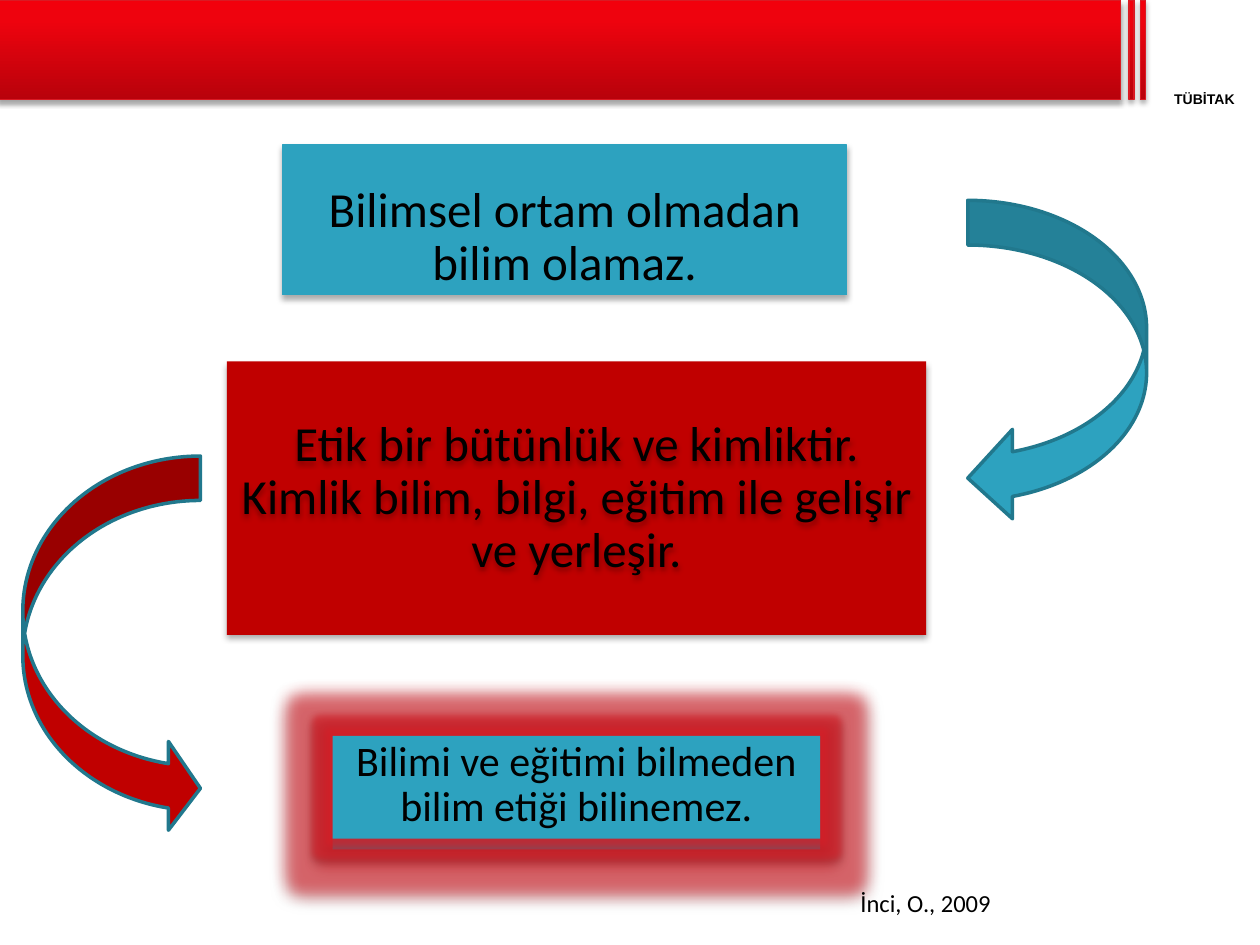
from copy import deepcopy

from lxml import etree
from pptx import Presentation
from pptx.dml.color import RGBColor
from pptx.enum.shapes import MSO_SHAPE as Preset
from pptx.enum.text import MSO_ANCHOR as Anchor, PP_ALIGN as Align
from pptx.oxml.ns import qn
from pptx.util import Pt

BLACK = RGBColor(0x00, 0x00, 0x00)
BLUE = RGBColor(0x2D, 0xA2, 0xBF)
DARK_BLUE = RGBColor(0x21, 0x78, 0x8D)
RED = RGBColor(0xC0, 0x00, 0x00)
GLOW_RED = RGBColor(0xDA, 0x1F, 0x28)
BAR_LINE = RGBColor(0xDA, 0x1A, 0x23)
BAR_STOPS = (
    (0, RGBColor(0xB8, 0x02, 0x0B)),
    (0.8, RGBColor(0xEE, 0x03, 0x0E)),
    (1, RGBColor(0xF2, 0x00, 0x0C)),
)
BAR_SHADOW = (35, 3.1, 1.8)
BOX_SHADOW = (32, 3.5, 2.2)
BOX_INSET = 2.4


def add_effect(shape, tag, color, opacity, **sizes):
    effects = shape._element.spPr.find(qn("a:effectLst"))
    effect = etree.SubElement(effects, qn(tag))
    for name, value in sizes.items():
        effect.set(name, str(int(value)))
    tint = etree.SubElement(effect, qn("a:srgbClr"), val=str(color))
    etree.SubElement(tint, qn("a:alpha"), val=str(opacity * 1000))


def add_glow(shape, radius, opacity):
    add_effect(shape, "a:glow", GLOW_RED, opacity, rad=Pt(radius))


def add_shadow(shape, opacity, blur, distance):
    """Cast a black shadow straight down."""
    add_effect(shape, "a:outerShdw", BLACK, opacity,
               blurRad=Pt(blur), dist=Pt(distance), dir=90 * 60000)


def add_preset(page, preset, left, top, width, height, fill=None, line=None, weight=0.75):
    shape = page.shapes.add_shape(preset, Pt(left), Pt(top), Pt(width), Pt(height))
    shape.shadow.inherit = False
    if fill is not None:
        shape.fill.solid()
        shape.fill.fore_color.rgb = fill
    if line is None:
        shape.line.fill.background()
    else:
        shape.line.color.rgb = line
        shape.line.width = Pt(weight)
    return shape


def add_bar(page, left, width):
    bar = add_preset(page, Preset.RECTANGLE, left, 0, width, 56.9, line=BAR_LINE)
    bar.fill.gradient()
    bar.fill.gradient_angle = 90
    first = bar._element.spPr.find(".//" + qn("a:gs"))
    first.addnext(deepcopy(first))
    for stop, (position, color) in zip(bar.fill.gradient_stops, BAR_STOPS):
        stop.position = position
        stop.color.rgb = color
    add_shadow(bar, *BAR_SHADOW)


def write(shape, text, size, anchor=Anchor.TOP, align=Align.CENTER, font="Calibri",
          bold=False, inset=BOX_INSET, spacing=None, wrap=True):
    frame = shape.text_frame
    frame.word_wrap = wrap
    frame.vertical_anchor = anchor
    if inset is not None:
        frame.margin_left = frame.margin_right = Pt(inset)
        frame.margin_top = frame.margin_bottom = Pt(inset)
    para = frame.paragraphs[0]
    para.text = text
    para.alignment = align
    para.line_spacing = spacing
    para.font.name = font
    para.font.size = Pt(size)
    para.font.bold = bold
    para.font.color.rgb = BLACK


def add_label(page, left, top, width, height, text, size, **style):
    label = page.shapes.add_textbox(Pt(left), Pt(top), Pt(width), Pt(height))
    write(label, text, size, **style)
    return label


def add_box(page, left, top, width, height, fill, line=None, glow=None):
    box = add_preset(page, Preset.RECTANGLE, left, top, width, height, fill, line)
    if glow:
        add_glow(box, *glow)
    add_shadow(box, *BOX_SHADOW)
    return box


def add_header(page):
    for left, width in ((-1.4, 641.5), (645.1, 2.9), (651.6, 2.9)):
        add_bar(page, left, width)
    add_label(page, 651.6, 51.8, 73.4, 9.4, "TÜBİTAK", 8,
              font="Arial", bold=True, inset=0)


def add_statements(page):
    top_box = add_box(page, 161.3, 82.8, 322.6, 85.7, BLUE, BLUE)
    write(top_box, "Bilimsel ortam olmadan bilim olamaz.", 28, Anchor.BOTTOM, spacing=0.9)

    middle = (129.6, 206.6, 399.6, 156.2)
    add_box(page, *middle, RED)
    middle_text = add_label(
        page, *middle,
        "Etik bir bütünlük ve kimliktir. Kimlik bilim, bilgi, eğitim ile gelişir ve yerleşir.",
        28, anchor=Anchor.MIDDLE, spacing=0.9)
    middle_text.shadow.inherit = False
    add_shadow(middle_text, *BOX_SHADOW)

    add_box(page, 190.1, 421.9, 278.6, 63.4, BLUE, glow=(18, 60))
    bottom_box = add_box(page, 190.1, 420.5, 278.6, 58.7, BLUE, glow=(8, 60))
    write(bottom_box, "Bilimi ve eğitimi bilmeden bilim etiği bilinemez.", 24, spacing=0.9)


def add_arrows(page):
    add_preset(page, Preset.CURVED_LEFT_ARROW, 553, 114.5, 102.2, 184.3,
               BLUE, DARK_BLUE, 2)
    red_arrow = add_preset(page, Preset.CURVED_RIGHT_ARROW, 13, 260.6, 101.5, 215.3,
                           RED, DARK_BLUE, 2)
    red_arrow.adjustments[2] = 0.18


def main():
    deck = Presentation()
    deck.slide_width, deck.slide_height = Pt(720), Pt(540)
    page = deck.slides.add_slide(deck.slide_layouts[6])
    add_header(page)
    add_statements(page)
    add_arrows(page)
    add_label(page, 484.6, 504, 89.3, 24.5, "İnci, O., 2009", 14,
              align=Align.LEFT, inset=None, wrap=False)
    deck.save("out.pptx")


if __name__ == "__main__":
    main()
